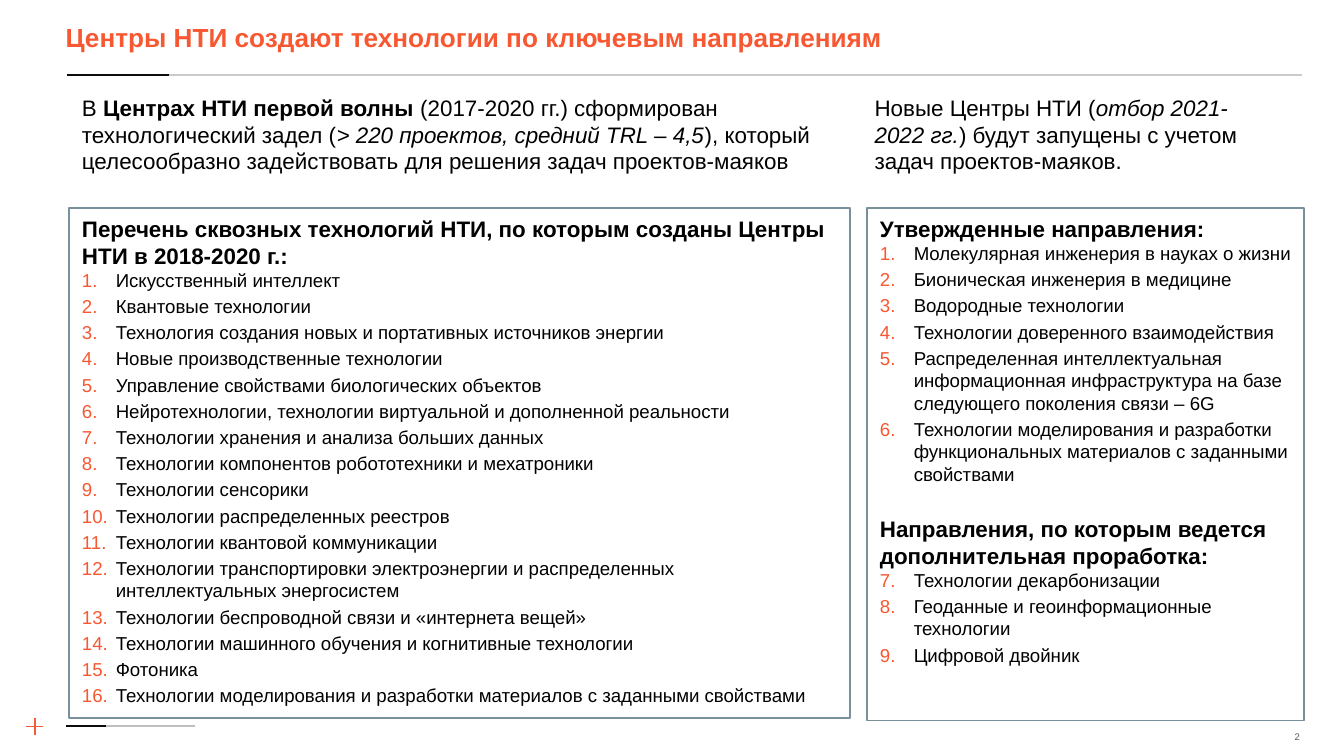
import pptx
import pptx.util
import pptx.dml.color
import pptx.enum.shapes
import pptx.enum.text
import pptx.oxml.ns
import lxml.etree

Cm, Pt = pptx.util.Cm, pptx.util.Pt
RGBColor = pptx.dml.color.RGBColor

ORANGE = RGBColor(0xF8, 0x58, 0x31)
CROSS = RGBColor(0xF7, 0x59, 0x3B)
BLACK = RGBColor(0, 0, 0)
INK = RGBColor(0x0C, 0x0C, 0x0C)
RULE = RGBColor(0xCA, 0xCA, 0xCA)
FOOT_RULE = RGBColor(0xBF, 0xBF, 0xBF)
FRAME = RGBColor(0x78, 0x90, 0x9C)
GREY = RGBColor(0x59, 0x59, 0x59)
WHITE = RGBColor(0xFF, 0xFF, 0xFF)

FIRST_WAVE = [
    "Искусственный интеллект",
    "Квантовые технологии",
    "Технология создания новых и портативных источников энергии",
    "Новые производственные технологии",
    "Управление свойствами биологических объектов",
    "Нейротехнологии, технологии виртуальной и дополненной реальности",
    "Технологии хранения и анализа больших данных",
    "Технологии компонентов робототехники и мехатроники",
    "Технологии сенсорики",
    "Технологии распределенных реестров",
    "Технологии квантовой коммуникации",
    "Технологии транспортировки электроэнергии и распределенных интеллектуальных энергосистем",
    "Технологии беспроводной связи и «интернета вещей»",
    "Технологии машинного обучения и когнитивные технологии",
    "Фотоника",
    "Технологии моделирования и разработки материалов с заданными свойствами",
]
APPROVED = [
    "Молекулярная инженерия в науках о жизни",
    "Бионическая инженерия в медицине",
    "Водородные технологии",
    "Технологии доверенного взаимодействия",
    "Распределенная интеллектуальная информационная инфраструктура на базе следующего поколения связи – 6G",
    "Технологии моделирования и разработки функциональных материалов с заданными свойствами",
]
IN_PROGRESS = [
    "Технологии декарбонизации",
    "Геоданные и геоинформационные технологии",
    "Цифровой двойник",
]


def add_line(slide, x1, y1, x2, y2, color, width):
    line = slide.shapes.add_connector(
        pptx.enum.shapes.MSO_CONNECTOR.STRAIGHT, Cm(x1), Cm(y1), Cm(x2), Cm(y2))
    line.line.color.rgb = color
    line.line.width = Pt(width)
    sp_pr = line._element.spPr
    lxml.etree.SubElement(sp_pr, pptx.oxml.ns.qn("a:effectLst"))


def add_run(p, text, size, color=BLACK, bold=False, italic=False):
    r = p.add_run()
    r.text = text
    r.font.name = "Arial"
    r.font.size = Pt(size)
    r.font.color.rgb = color
    r.font.bold = bold
    r.font.italic = italic


def add_textbox(slide, x, y, w, h, inset=None):
    tf = slide.shapes.add_textbox(Cm(x), Cm(y), Cm(w), Cm(h)).text_frame
    tf.word_wrap = True
    if inset is not None:
        tf.margin_left = tf.margin_right = tf.margin_top = tf.margin_bottom = Cm(inset)
    return tf


def number_paragraph(p, start):
    """Hanging indent with an orange automatic number."""
    p.space_after = Pt(2)
    p_pr = p._p.get_or_add_pPr()
    p_pr.set("marL", str(Cm(0.64)))
    p_pr.set("indent", str(Cm(-0.64)))
    qn = pptx.oxml.ns.qn
    color = lxml.etree.SubElement(p_pr, qn("a:buClr"))
    lxml.etree.SubElement(color, qn("a:srgbClr")).set("val", str(ORANGE))
    lxml.etree.SubElement(p_pr, qn("a:buFont")).set("typeface", "+mj-lt")
    number = lxml.etree.SubElement(p_pr, qn("a:buAutoNum"))
    number.set("type", "arabicPeriod")
    if start > 1:
        number.set("startAt", str(start))


def add_header(slide, x, y, w):
    tf = add_textbox(slide, x - 0.28, y, 20.73, 1.12, inset=0.25)
    add_run(tf.paragraphs[0], "Центры НТИ создают технологии по ключевым направлениям",
            14, ORANGE, bold=True)
    rule_y = y + 1.27
    add_line(slide, x, rule_y, x + w, rule_y, RULE, 1)
    add_line(slide, x, rule_y, x + 1.93, rule_y, INK, 1)


def add_intro(slide, x, y, w, h, lines):
    """Each line is a list of (text, bold, italic); lines are split by a break."""
    p = add_textbox(slide, x, y, w, h).paragraphs[0]
    for i, line in enumerate(lines):
        if i:
            p.add_line_break()
        for text, bold, italic in line:
            add_run(p, text, 12, bold=bold, italic=italic)


def add_list_panel(slide, x, y, w, h, sections):
    sp = slide.shapes.add_shape(
        pptx.enum.shapes.MSO_SHAPE.RECTANGLE, Cm(x), Cm(y), Cm(w), Cm(h))
    sp.shadow.inherit = False
    sp.fill.solid()
    sp.fill.fore_color.rgb = WHITE
    sp.line.color.rgb = FRAME
    sp.line.width = Pt(1)
    tf = sp.text_frame
    tf.word_wrap = True
    tf.vertical_anchor = pptx.enum.text.MSO_ANCHOR.TOP
    start = 1
    for heading, items in sections:
        p = tf.paragraphs[0] if start == 1 else tf.add_paragraph()
        p.alignment = pptx.enum.text.PP_ALIGN.LEFT
        if start > 1:
            p.space_before = Pt(14)
        add_run(p, heading, 12, bold=True)
        for item in items:
            p = tf.add_paragraph()
            p.alignment = pptx.enum.text.PP_ALIGN.LEFT
            number_paragraph(p, start)
            add_run(p, item, 10)
        start += len(items)


def add_footer(slide, x, y):
    # Short two-tone rule
    add_line(slide, x, y, x + 2.44, y, FOOT_RULE, 0.75)
    add_line(slide, x, y, x + 0.76, y, INK, 0.75)
    # Orange cross
    cx, cy, arm = x - 0.58, y + 0.01, 0.16
    add_line(slide, cx - arm, cy, cx + arm, cy, CROSS, 0.75)
    add_line(slide, cx, cy - arm, cx, cy + arm, CROSS, 0.75)
    # Page number
    tf = add_textbox(slide, 23.52, 13.61, 1.3, 0.69, inset=0.25)
    tf.vertical_anchor = pptx.enum.text.MSO_ANCHOR.MIDDLE
    p = tf.paragraphs[0]
    p.alignment = pptx.enum.text.PP_ALIGN.RIGHT
    p.line_spacing = 0.8
    add_run(p, "2", 5.1, GREY)


def main():
    prs = pptx.Presentation()
    prs.slide_width, prs.slide_height = Cm(25.4), Cm(14.29)
    slide = prs.slides.add_slide(prs.slide_layouts[6])

    add_footer(slide, 1.24, 13.72)
    add_header(slide, 1.27, 0.15, 23.34)

    # Left column: first wave
    add_intro(slide, 1.3, 1.65, 14.76, 1.8, [[
        ("В ", False, False),
        ("Центрах НТИ первой волны", True, False),
        (" (2017-2020 гг.) сформирован технологический задел (", False, False),
        ("> 220 проектов, средний TRL – 4,5", False, True),
        ("), который целесообразно задействовать для решения задач проектов-маяков",
         False, False),
    ]])
    add_list_panel(slide, 1.3, 3.94, 14.76, 9.63, [
        ("Перечень сквозных технологий НТИ, по которым созданы Центры НТИ в 2018-2020 г.:",
         FIRST_WAVE),
    ])

    # Right column: new centres
    add_intro(slide, 16.28, 1.65, 8.26, 1.8, [
        [("Новые Центры НТИ (", False, False), ("отбор 2021-", False, True)],
        [("2022 гг.", False, True),
         (") будут запущены с учетом задач проектов-маяков.", False, False)],
    ])
    add_list_panel(slide, 16.38, 3.94, 8.26, 9.68, [
        ("Утвержденные направления:", APPROVED),
        ("Направления, по которым ведется дополнительная проработка:", IN_PROGRESS),
    ])

    prs.save("out.pptx")


if __name__ == "__main__":
    main()
